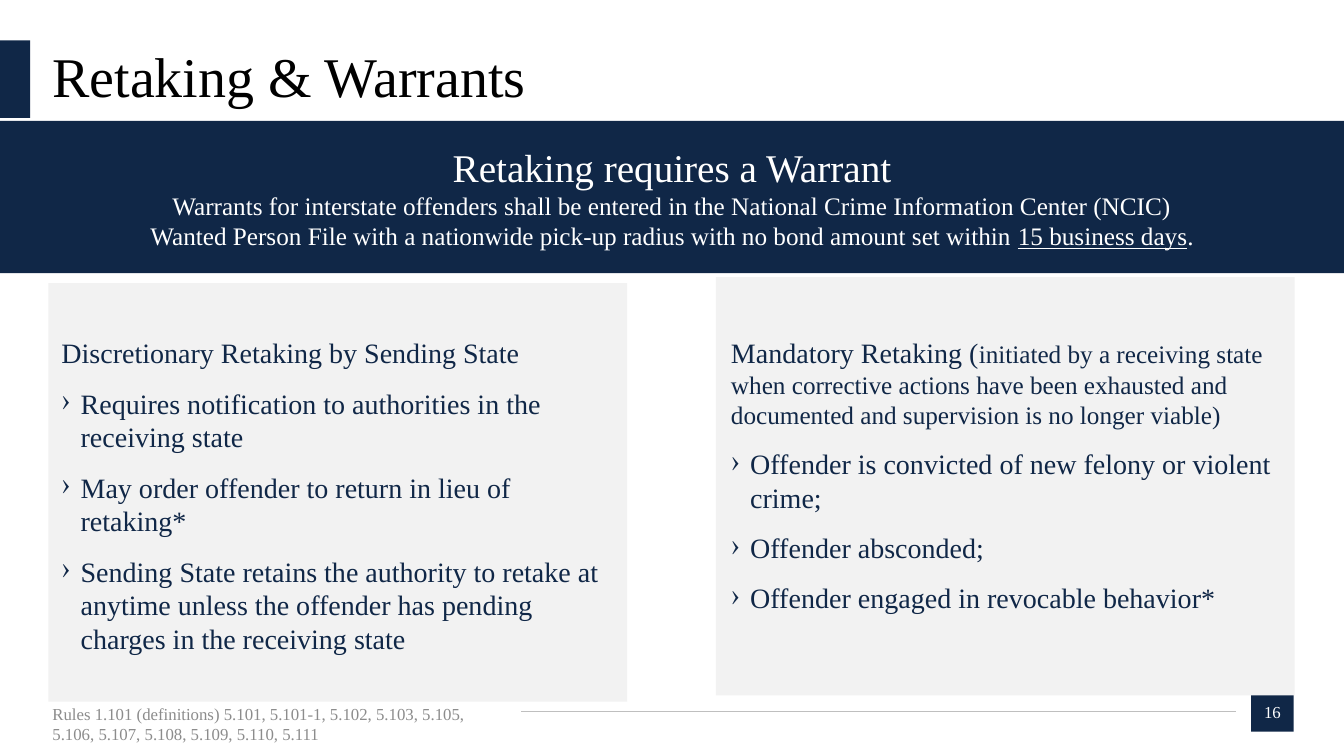
from dataclasses import dataclass

from lxml import etree
from pptx import Presentation
from pptx.dml.color import RGBColor
from pptx.enum.shapes import MSO_CONNECTOR, MSO_SHAPE
from pptx.enum.text import MSO_ANCHOR, PP_ALIGN
from pptx.oxml.ns import qn
from pptx.util import Pt

RECTANGLE = MSO_SHAPE.RECTANGLE
STRAIGHT = MSO_CONNECTOR.STRAIGHT
MIDDLE, TOP = MSO_ANCHOR.MIDDLE, MSO_ANCHOR.TOP
LEFT, CENTER = PP_ALIGN.LEFT, PP_ALIGN.CENTER
EMU_PER_PX = 9144
BULLET_INDENT = 19


@dataclass(frozen=True)
class Theme:
    """Colours, font and type sizes of the slide."""
    navy: str = "102747"
    panel: str = "F2F2F2"
    rule: str = "BFBFBF"
    muted: str = "8C8C8C"
    black: str = "000000"
    white: str = "FFFFFF"
    font: str = "Times New Roman"
    title: int = 40
    headline: int = 28
    body: int = 20
    detail: int = 18
    small: int = 12


THEME = Theme()


def px(*lengths):
    """Turn px lengths into EMU."""
    return [length * EMU_PER_PX for length in lengths]


def add_block(slide, box, color):
    """Add a plain filled rectangle."""
    block = slide.shapes.add_shape(RECTANGLE, *px(*box))
    block.shadow.inherit = False
    block.fill.solid()
    block.fill.fore_color.rgb = RGBColor.from_string(color)
    block.line.fill.background()
    return block


def prepare_frame(shape, anchor, insets=(0, 0, 0, 0)):
    """Set wrapping, anchor and insets, and return the text frame."""
    frame = shape.text_frame
    frame.word_wrap = True
    frame.vertical_anchor = anchor
    (frame.margin_left, frame.margin_top,
     frame.margin_right, frame.margin_bottom) = px(*insets)
    return frame


def write_line(frame, index, text, size, color, align=LEFT):
    """Write one styled paragraph, adding it when it is not the first."""
    line = frame.add_paragraph() if index else frame.paragraphs[0]
    line.alignment = align
    line.font.name = THEME.font
    line.font.size = Pt(size)
    line.font.color.rgb = RGBColor.from_string(color)
    line.add_run().text = text
    return line


def add_bullet(line):
    """Give a paragraph a hanging angle bullet."""
    properties = line._p.get_or_add_pPr()
    indent, = px(BULLET_INDENT)
    properties.set("marL", str(indent))
    properties.set("indent", str(-indent))
    bullet_color = etree.Element(qn("a:buClr"))
    etree.SubElement(bullet_color, qn("a:srgbClr"), val=THEME.navy)
    bullet_mark = etree.Element(qn("a:buChar"), char="›")
    default_style = properties.find(qn("a:defRPr"))
    default_style.addprevious(bullet_color)
    default_style.addprevious(bullet_mark)


def add_header(slide, box, title):
    """Place the accent block and the title beside it."""
    left, top, width, height = box
    add_block(slide, (left, top, 30, height), THEME.navy)
    heading = slide.shapes.add_textbox(*px(left + 52, top, width - 102, height))
    line = write_line(prepare_frame(heading, MIDDLE), 0, title, THEME.title, THEME.black)
    line.line_spacing = 0.9


def add_footer(slide, box, rules, number):
    """Place the rule references, the hairline and the page number."""
    left, top, width, height = box
    references = slide.shapes.add_textbox(*px(left, top + 12, 450, height))
    frame = prepare_frame(references, MIDDLE, (0, 5, 10, 5))
    write_line(frame, 0, rules, THEME.small, THEME.muted)

    hairline = slide.shapes.add_connector(
        STRAIGHT, *px(left + 465, top + 20, left + width - 57, top + 20))
    hairline.line.color.rgb = RGBColor.from_string(THEME.rule)
    hairline.line.width = Pt(0.5)
    etree.SubElement(hairline._element.spPr, qn("a:effectLst"))

    badge = add_block(slide, (left + width - 42, top, 42, height), THEME.navy)
    write_line(prepare_frame(badge, MIDDLE), 0, number, THEME.small, THEME.white, CENTER)


def add_banner(slide, box, headline, details, deadline):
    """Place the full-width band with its headline and underlined deadline."""
    frame = prepare_frame(add_block(slide, box, THEME.navy), MIDDLE, (10, 5, 10, 5))
    write_line(frame, 0, headline, THEME.headline, THEME.white, CENTER)
    for index, detail in enumerate(details, 1):
        last = write_line(frame, index, detail, THEME.detail, THEME.white, CENTER)
    underlined = last.add_run()
    underlined.text = deadline
    underlined.font.underline = True
    last.add_run().text = "."


def add_panel(slide, box, inset, text_width, heading, note, points):
    """Place a grey panel with a heading, an optional note and bullets."""
    left, top, _, height = box
    inset_x, inset_y = inset
    add_block(slide, box, THEME.panel)
    content = slide.shapes.add_textbox(
        *px(left + inset_x, top + inset_y, text_width, height - 2 * inset_y))
    frame = prepare_frame(content, TOP)
    for index, text in enumerate([heading, *points]):
        line = write_line(frame, index, text, THEME.body, THEME.navy)
        line.space_after = Pt(12)
        if index:
            add_bullet(line)
    if note:
        aside = frame.paragraphs[0].add_run()
        aside.text = note
        aside.font.size = Pt(THEME.detail)


def main():
    """Build the slide and save it."""
    deck = Presentation()
    deck.slide_width, deck.slide_height = px(1333, 750)
    slide = deck.slides.add_slide(deck.slide_layouts[6])

    add_header(slide, (0, 40, 1333, 77), "Retaking & Warrants")
    add_footer(
        slide, (52, 686, 1231, 40),
        "Rules 1.101 (definitions) 5.101, 5.101-1, 5.102, 5.103, 5.105, "
        "5.106, 5.107, 5.108, 5.109, 5.110, 5.111", "16")
    add_banner(
        slide, (0, 120, 1333, 151), "Retaking requires a Warrant",
        ["Warrants for interstate offenders shall be entered in the "
         "National Crime Information Center (NCIC)",
         "Wanted Person File with a nationwide pick-up radius with "
         "no bond amount set within "],
        "15 business days")
    add_panel(
        slide, (48, 281, 574, 415), (13, 52), 547,
        "Discretionary Retaking by Sending State", "",
        ["Requires notification to authorities in the receiving state",
         "May order offender to return in lieu of retaking*",
         "Sending State retains the authority to retake at anytime unless "
         "the offender has pending charges in the receiving state"])
    add_panel(
        slide, (710, 275, 574, 415), (15, 58), 559,
        "Mandatory Retaking (",
        "initiated by a receiving state when corrective actions have been "
        "exhausted and documented and supervision is no longer viable)",
        ["Offender is convicted of new felony or violent crime;",
         "Offender absconded;",
         "Offender engaged in revocable behavior*"])

    deck.save("out.pptx")


if __name__ == "__main__":
    main()
